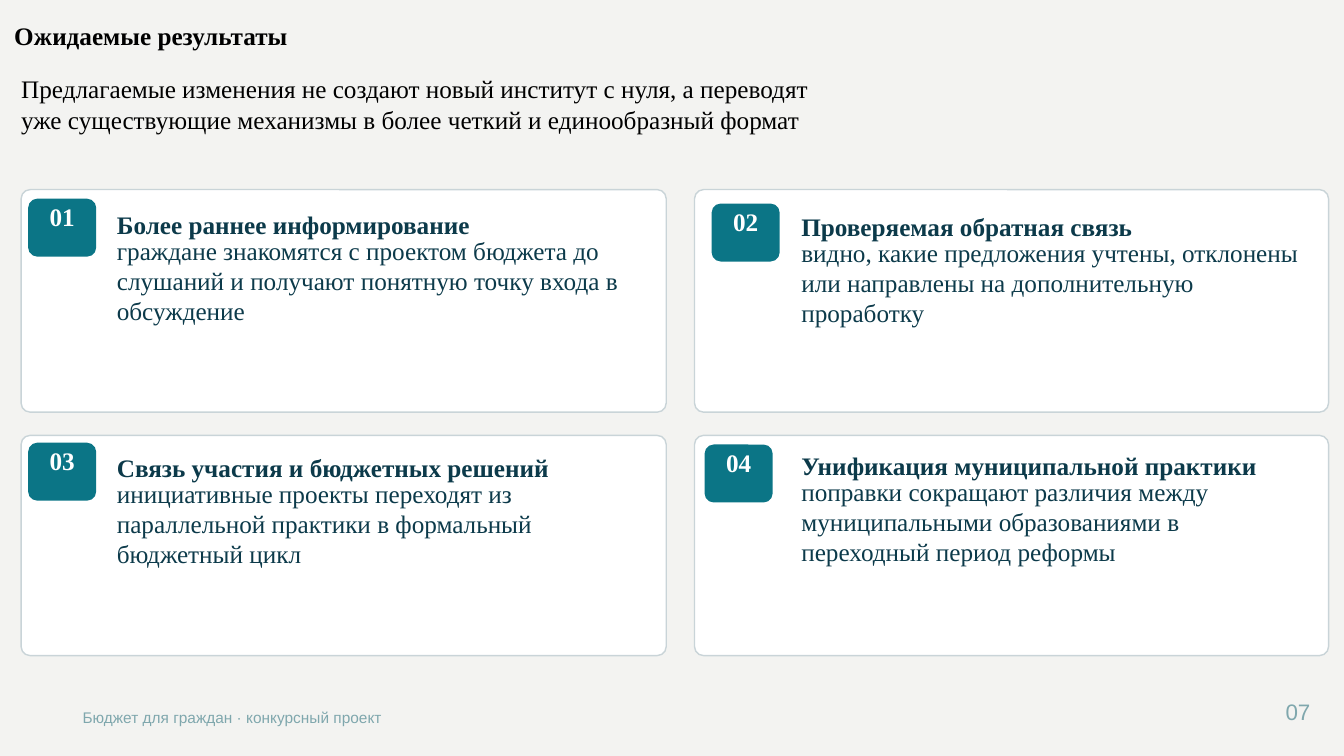
from pptx import Presentation
from pptx.dml.color import RGBColor
from pptx.enum.shapes import MSO_SHAPE
from pptx.enum.text import MSO_ANCHOR, PP_ALIGN
from pptx.util import Pt

ROUNDED = MSO_SHAPE.ROUNDED_RECTANGLE
MIDDLE = MSO_ANCHOR.MIDDLE
LEFT, CENTER, RIGHT = PP_ALIGN.LEFT, PP_ALIGN.CENTER, PP_ALIGN.RIGHT

SERIF, SANS = "Times New Roman", "Arial"
BLACK, WHITE, PAPER = "000000", "FFFFFF", "F3F3F1"
TEAL, NAVY, BORDER, MUTED = "0B7586", "0C3A4A", "C9D4D8", "7FA7AD"

# Card grid: (start, length) of each column and row
COLUMNS = [(15.1, 460.8), (496.1, 452.9)]
ROWS = [(135.4, 159), (311, 157.3)]
TEXT_INSETS = [68.4, 76.3]

# Heading, explanation, badge offset and heading drop inside each card
RESULTS = [
    ("Более раннее информирование",
     "граждане знакомятся с проектом бюджета до слушаний и получают понятную точку входа в обсуждение",
     (5, 6.5), 13),
    ("Проверяемая обратная связь",
     "видно, какие предложения учтены, отклонены или направлены на дополнительную проработку",
     (12.2, 10), 14.4),
    ("Связь участия и бюджетных решений",
     "инициативные проекты переходят из параллельной практики в формальный бюджетный цикл",
     (5, 5.2), 10.8),
    ("Унификация муниципальной практики",
     "поправки сокращают различия между муниципальными образованиями в переходный период реформы",
     (7.2, 6.5), 9.4),
]


def rgb(value):
    return RGBColor.from_string(value)


def write(slide, text, box, holder=None, size=18, font=SERIF, color=BLACK,
          bold=False, align=LEFT):
    """Write text into a new text box, or into the given placeholder."""
    left, top, width, height = (Pt(n) for n in box)
    if holder is None:
        holder = slide.shapes.add_textbox(left, top, width, height)
    else:
        holder.left, holder.top, holder.width, holder.height = left, top, width, height
    frame = holder.text_frame
    frame.text = text
    frame.auto_size = None
    frame.word_wrap = True
    frame.vertical_anchor = MIDDLE
    frame.margin_left = frame.margin_right = frame.margin_top = frame.margin_bottom = 0
    paragraph = frame.paragraphs[0]
    paragraph.alignment = align
    style = paragraph.runs[0].font
    style.size, style.name, style.bold = Pt(size), font, bold
    style.color.rgb = rgb(color)


def add_panel(slide, box, fill, rounding, border=None):
    panel = slide.shapes.add_shape(ROUNDED, *(Pt(n) for n in box))
    panel.adjustments[0] = rounding
    panel.shadow.inherit = False
    panel.fill.solid()
    panel.fill.fore_color.rgb = rgb(fill)
    if border:
        panel.line.color.rgb = rgb(border)
        panel.line.width = Pt(1)
    else:
        panel.line.fill.background()


def add_footer(slide, box):
    left, top, width, height = box
    write(slide, "Бюджет для граждан · конкурсный проект",
          (left, top + 5.5, 259.2, 17.3), size=11, font=SANS, color=MUTED)
    write(slide, "07", (left + width - 32.4, top, 32.4, height),
          size=16, font=SANS, color=MUTED, align=RIGHT)


def add_header(slide, box):
    left, top, width, _ = box
    write(slide, "Ожидаемые результаты", (left, top, 547.2, 50.4),
          holder=slide.shapes.title, bold=True)
    write(slide, "Предлагаемые изменения не создают новый институт с нуля, "
          "а переводят уже существующие механизмы в более четкий и единообразный формат",
          (left + 5, top + 42.5, width - 5, 63.4))


def add_result_card(slide, box, number, result, text_inset):
    left, top, width, _ = box
    heading, explanation, (badge_dx, badge_dy), heading_drop = result
    add_panel(slide, box, WHITE, 0.041, BORDER)

    # Number badge
    badge_left, badge_top = left + badge_dx, top + badge_dy
    add_panel(slide, (badge_left, badge_top, 48.6, 41.4), TEAL, 0.158)
    write(slide, f"{number:02d}", (badge_left, badge_top + 7.2, 48.6, 10.8),
          color=WHITE, bold=True, align=CENTER)

    # Heading and explanation
    text_left, text_top, text_width = left + text_inset, top + heading_drop, width - 97
    write(slide, heading, (text_left, text_top, text_width, 24), color=NAVY, bold=True)
    write(slide, explanation, (text_left, text_top + 25, text_width, 54), color=NAVY)


def main():
    deck = Presentation()
    deck.slide_width, deck.slide_height = Pt(960), Pt(540)
    slide = deck.slides.add_slide(deck.slide_layouts[5])
    slide.background.fill.solid()
    slide.background.fill.fore_color.rgb = rgb(PAPER)

    add_footer(slide, (59, 498.5, 877, 20))
    add_header(slide, (10.1, 0, 581.7, 106))
    for index, result in enumerate(RESULTS):
        row, column = divmod(index, 2)
        left, width = COLUMNS[column]
        top, height = ROWS[row]
        add_result_card(slide, (left, top, width, height), index + 1,
                        result, TEXT_INSETS[column])
    deck.save("out.pptx")


if __name__ == "__main__":
    main()
